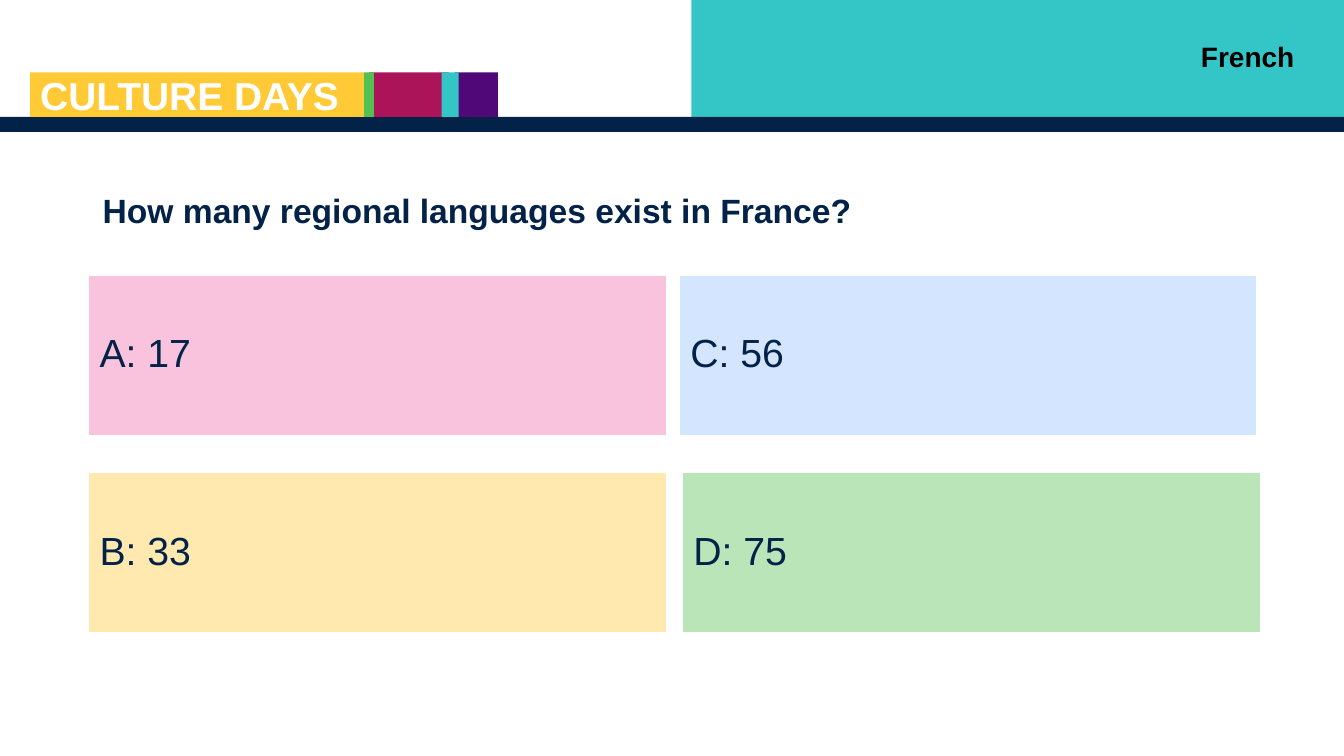
from pptx import Presentation
from pptx.dml.color import RGBColor
from pptx.enum.shapes import MSO_SHAPE
from pptx.enum.text import MSO_ANCHOR, PP_ALIGN
from pptx.util import Pt

NAVY = RGBColor(0x03, 0x22, 0x48)
TEAL = RGBColor(0x34, 0xC6, 0xC6)
PURPLE = RGBColor(0x50, 0x07, 0x78)
MAGENTA = RGBColor(0xAC, 0x14, 0x5A)
GREEN = RGBColor(0x52, 0xC1, 0x52)
YELLOW = RGBColor(0xFF, 0xCA, 0x36)
PALE_PINK = RGBColor(0xF9, 0xC3, 0xDD)
PALE_BLUE = RGBColor(0xD3, 0xE5, 0xFF)
PALE_YELLOW = RGBColor(0xFF, 0xE9, 0xAE)
PALE_GREEN = RGBColor(0xB9, 0xE5, 0xB9)
WHITE = RGBColor(0xFF, 0xFF, 0xFF)
BLACK = RGBColor(0, 0, 0)

WIDTH, HEIGHT = 960, 540
HEADER_HEIGHT = 83.5


def add_block(page, box, fill, outlined=False):
    block = page.shapes.add_shape(MSO_SHAPE.RECTANGLE, *map(Pt, box))
    block.shadow.inherit = False
    block.fill.solid()
    block.fill.fore_color.rgb = fill
    if outlined:
        block.line.color.rgb = fill
        block.line.width = Pt(0.75)
    else:
        block.line.fill.background()
    return block


def write(shape, text, size, color, bold=False, anchor=MSO_ANCHOR.MIDDLE,
          align=PP_ALIGN.LEFT, spacing=0.9):
    frame = shape.text_frame
    frame.word_wrap = True
    frame.vertical_anchor = anchor
    para = frame.paragraphs[0]
    para.alignment = align
    para.line_spacing = spacing
    span = para.add_run()
    span.text = text
    for name, value in {"name": "Arial", "size": Pt(size), "bold": bold}.items():
        setattr(span.font, name, value)
    span.font.color.rgb = color


def add_label(page, box, text, size, color, **layout):
    label = page.shapes.add_textbox(*map(Pt, box))
    write(label, text, size, color, bold=True, **layout)


def add_banner(page, left, top, height):
    # Stripes: offset from the left edge, width, colour
    stripes = [
        (303.1, 31, PURPLE),
        (241.9, 56.9, MAGENTA),
        (293.8, 12.2, TEAL),
        (238.3, 7.2, GREEN),
        (0, 238.3, YELLOW),
    ]
    for offset, width, color in stripes:
        add_block(page, (left + offset, top, width, height), color)
    add_label(page, (left, top + 2.2, 298.8, 34.6), "CULTURE DAYS", 27.8, WHITE,
              anchor=MSO_ANCHOR.TOP, spacing=0.8)


def add_header(page, left, top, width, height):
    # Teal panel, navy rule, banner and language name
    panel_left = left + 493.9
    add_block(page, (panel_left, top, left + width - panel_left, height), TEAL)
    add_block(page, (left, top + height, width, 10.8), NAVY)
    add_banner(page, left + 21.6, top + 51.8, height - 51.8)
    add_label(page, (left + 547.9, top + 24.5, 383.8, 31.7), "French", 20, BLACK,
              anchor=MSO_ANCHOR.TOP, align=PP_ALIGN.RIGHT, spacing=1.0)


def add_answers(page, left, top, width, height):
    # Two rows, each with its own gap between the columns
    card_width, card_height = 411.1, 113
    rows = [
        (10.8, [("A: 17", PALE_PINK), ("C: 56", PALE_BLUE)]),
        (13, [("B: 33", PALE_YELLOW), ("D: 75", PALE_GREEN)]),
    ]
    for row, (gap, cards) in enumerate(rows):
        card_top = top + row * (height - card_height)
        for column, (text, color) in enumerate(cards):
            card_left = left + column * (card_width + gap)
            card = add_block(page, (card_left, card_top, card_width, card_height),
                             color, outlined=True)
            write(card, text, 28, NAVY)


def add_quiz(page, left, top, width, height):
    # Question above the answer grid
    add_label(page, (left + 2.2, top, 828, 64.8),
              "How many regional languages exist in France?", 24, NAVY)
    add_answers(page, left, top + 77.8, width, height - 77.8)


def main():
    deck = Presentation()
    deck.slide_width, deck.slide_height = Pt(WIDTH), Pt(HEIGHT)
    page = deck.slides.add_slide(deck.slide_layouts[6])
    add_header(page, 0, 0, WIDTH, HEADER_HEIGHT)
    add_quiz(page, 64.1, 119.5, 835.2, 331.9)
    deck.save("out.pptx")


if __name__ == "__main__":
    main()
